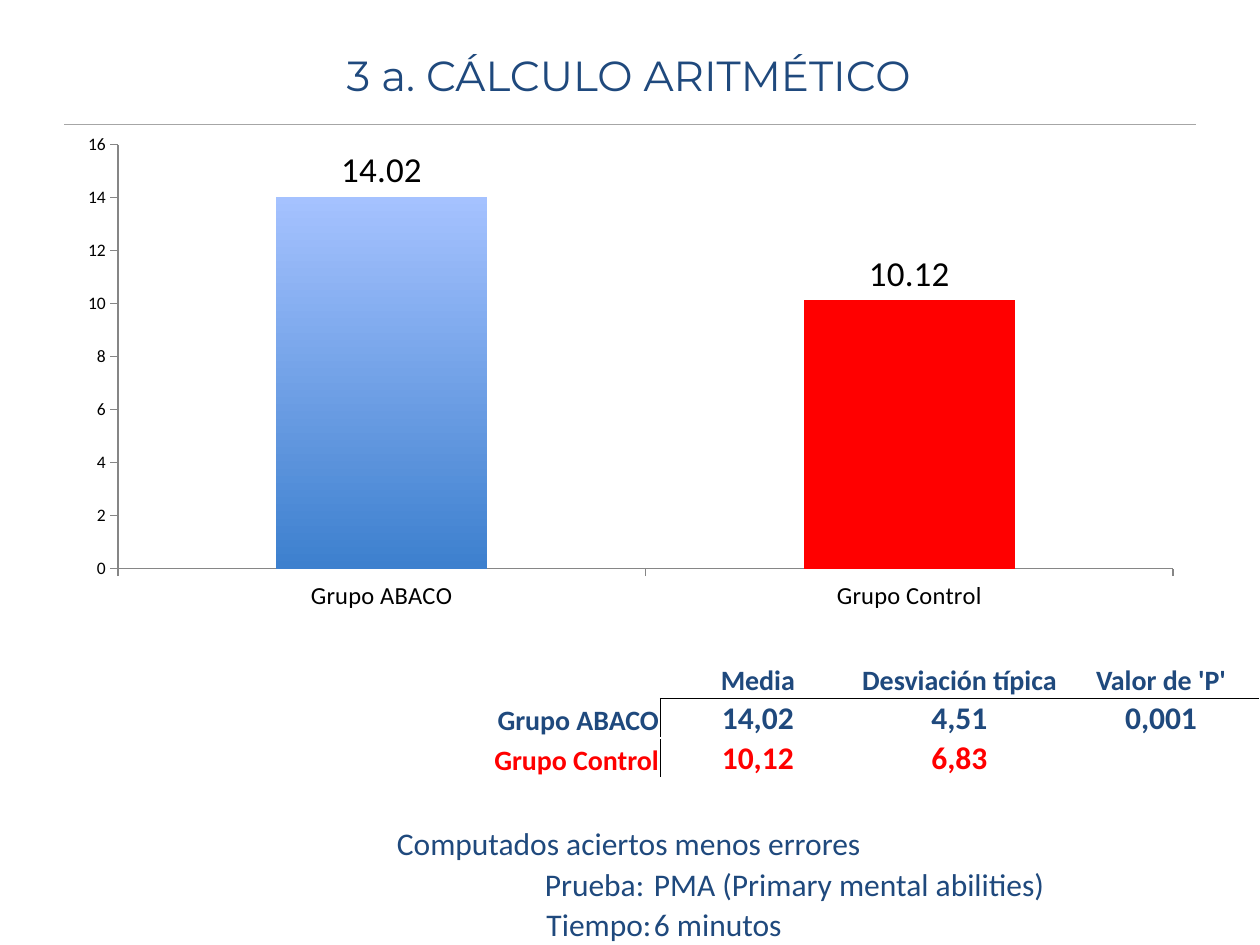
from lxml.etree import SubElement
from pptx import Presentation
from pptx.chart.data import CategoryChartData
from pptx.dml.color import RGBColor
from pptx.enum.chart import XL_CHART_TYPE, XL_LABEL_POSITION, XL_TICK_MARK
from pptx.enum.shapes import MSO_CONNECTOR
from pptx.enum.text import MSO_ANCHOR, PP_ALIGN
from pptx.oxml.ns import qn
from pptx.util import Inches, Pt

NAVY, RED, BLACK = "1F497D", "FF0000", "000000"
LEFT, MID, RIGHT = PP_ALIGN.LEFT, PP_ALIGN.CENTER, PP_ALIGN.RIGHT


def tint(code):
    return RGBColor.from_string(code)


def style(font, size, color, name="Calibri", bold=False):
    font.size, font.name, font.bold = Pt(size), name, bold
    font.color.rgb = tint(color)


def add_title(slide, box, text):
    title = slide.shapes.title
    title.left, title.top, title.width, title.height = map(Inches, box)
    frame = title.text_frame
    frame.text = text
    frame.vertical_anchor = MSO_ANCHOR.MIDDLE
    para = frame.paragraphs[0]
    para.alignment = MID
    style(para.runs[0].font, 24, NAVY, "Montserrat")


def add_rule(slide, box):
    left, top, width = box
    ends = map(Inches, (left, top, left + width, top))
    rule = slide.shapes.add_connector(MSO_CONNECTOR.STRAIGHT, *ends)
    rule.line.color.rgb = tint("A6A6A6")
    rule.line.width = Pt(0.75)
    SubElement(rule._element.spPr, qn("a:effectLst"))


def add_bars(slide, box, names, values):
    data = CategoryChartData()
    data.categories = names
    data.add_series("Series 1", values)
    kind = XL_CHART_TYPE.COLUMN_CLUSTERED
    chart = slide.shapes.add_chart(kind, *map(Inches, box), data).chart
    chart.has_legend = chart.has_title = False
    style(chart.font, 10, BLACK)
    for axis, size in ((chart.category_axis, 14), (chart.value_axis, 10)):
        axis.has_major_gridlines = False
        axis.major_tick_mark = XL_TICK_MARK.OUTSIDE
        axis.minor_tick_mark = XL_TICK_MARK.NONE
        axis.format.line.color.rgb = tint("868686")
        style(axis.tick_labels.font, size, BLACK)
    scale = chart.value_axis
    scale.minimum_scale, scale.maximum_scale, scale.major_unit = 0, 16, 2
    plot = chart.plots[0]
    plot.gap_width, plot.vary_by_categories = 150, False
    bars = plot.series[0]
    fill = bars.format.fill
    fill.gradient()
    fill.gradient_angle = 90
    for stop, color in zip(fill.gradient_stops, ("3D80CE", "A5C2FF")):
        stop.color.rgb = tint(color)
    mark = bars.points[1].format.fill
    mark.solid()
    mark.fore_color.rgb = tint(RED)
    labels = bars.data_labels
    labels.show_value = True
    labels.position = XL_LABEL_POSITION.OUTSIDE_END
    style(labels.font, 20, BLACK)


def add_grid(slide, box, cols, count):
    shape = slide.shapes.add_table(count, len(cols), *map(Inches, box))
    table = shape.table
    table.first_row = table.horz_banding = False
    for col, width in zip(table.columns, cols):
        col.width = Inches(width)
    return table


def edge(cell, sides):
    for side in sides:
        line = SubElement(cell._tc.get_or_add_tcPr(), qn("a:ln" + side), w="6350")
        fill = SubElement(line, qn("a:solidFill"))
        SubElement(fill, qn("a:srgbClr"), val=BLACK)


def put(cell, text, size, color, align, bold=False, sides=""):
    edge(cell, sides)
    cell.fill.background()
    cell.margin_left = cell.margin_right = cell.margin_top = Inches(0.01)
    cell.margin_bottom = 0
    cell.vertical_anchor = MSO_ANCHOR.BOTTOM
    cell.text_frame.text = text
    para = cell.text_frame.paragraphs[0]
    para.alignment = align
    for run in para.runs:
        style(run.font, size, color, bold=bold)
    if not text:
        SubElement(para._p, qn("a:endParaRPr"), sz=str(size * 100))


def add_stats(slide, box, rows):
    table = add_grid(slide, box, (4.24, 1.55, 1.65, 1.55), len(rows))
    for r, row in enumerate(rows):
        table.rows[r].height = Inches(0.28)
        for c, text in enumerate(row):
            size = 18 if r and c else 16
            color = RED if r == 2 else NAVY
            align = MID if c else RIGHT
            if c:
                sides = ("L" if r and c == 1 else "") + ("B", "T", "")[r]
            else:
                sides = "R" if r else ""
            put(table.cell(r, c), text, size, color, align, True, sides)


def add_notes(slide, box, head, rows):
    table = add_grid(slide, box, (2.04, 4.82), len(rows) + 1)
    table.cell(0, 0).merge(table.cell(0, 1))
    put(table.cell(0, 0), head, 18, NAVY, LEFT)
    for r, row in enumerate(rows, 1):
        for c, text in enumerate(row):
            put(table.cell(r, c), text, 18, NAVY, LEFT if c else RIGHT)


def main():
    deck = Presentation()
    deck.slide_width, deck.slide_height = Inches(10), Inches(7.5)
    slide = deck.slides.add_slide(deck.slide_layouts[5])
    names = ("Grupo ABACO", "Grupo Control")
    add_title(slide, (0.49, 0.29, 9, 0.61), "3 a. CÁLCULO ARITMÉTICO")
    add_rule(slide, (0.51, 0.99, 8.98))
    add_notes(slide, (3.14, 6.54, 6.86, 0.96), "Computados aciertos menos errores", (
        ("Prueba: ", "PMA (Primary mental abilities)"),
        ("Tiempo:", "6 minutos"),
    ))
    add_stats(slide, (1, 5.26, 9, 0.84), (
        ("", "Media", "Desviación típica", "Valor de 'P'"),
        (names[0], "14,02", "4,51", "0,001"),
        (names[1], "10,12", "6,83", ""),
    ))
    add_bars(slide, (0.52, 0.99, 8.97, 3.94), names, (14.02, 10.12))
    deck.save("out.pptx")


if __name__ == "__main__":
    main()
